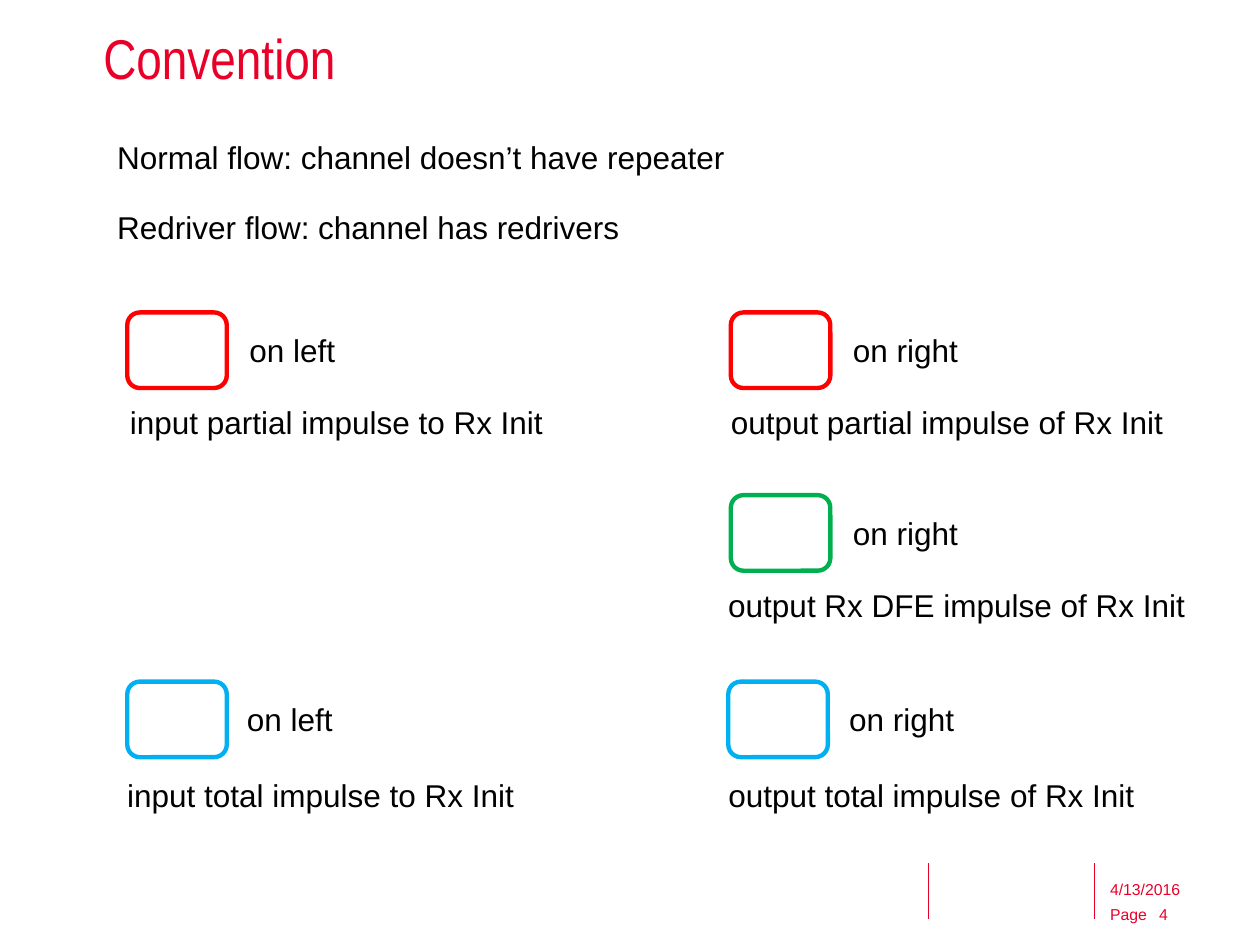
from dataclasses import dataclass
from lxml import etree
from pptx import Presentation
from pptx.dml.color import RGBColor
from pptx.enum.shapes import MSO_CONNECTOR, MSO_SHAPE
from pptx.enum.text import MSO_ANCHOR, MSO_AUTO_SIZE
from pptx.oxml.ns import qn
from pptx.util import Inches, Pt

ROUNDED = MSO_SHAPE.ROUNDED_RECTANGLE
STRAIGHT = MSO_CONNECTOR.STRAIGHT
TOP, BOTTOM = MSO_ANCHOR.TOP, MSO_ANCHOR.BOTTOM
NO_FIT = MSO_AUTO_SIZE.NONE
COLUMNS, ROWS = 100, 75
ACCENT, BLACK = "E90029", "000000"
RED, GREEN, BLUE = "FF0000", "00B050", "00B0F0"


def color(value):
    return RGBColor.from_string(value)


@dataclass
class SlideBuilder:
    presentation: object
    slide: object
    font: str = "Arial"

    def place(self, column, row):
        return (round(self.presentation.slide_width * column / COLUMNS),
                round(self.presentation.slide_height * row / ROWS))

    def text(self, area, lines, size=18, ink=BLACK, font=None, anchor=TOP,
             padding=(0.05, 0.1), spacing=1.0, gap=18, wrap=False):
        left, top, width, height = area
        shape = self.slide.shapes.add_textbox(*self.place(left, top), *self.place(width, height))
        frame = shape.text_frame
        frame.auto_size = NO_FIT
        frame.word_wrap = wrap
        frame.vertical_anchor = anchor
        vertical, right = padding
        frame.margin_left = 0
        frame.margin_right = Inches(right)
        frame.margin_top = frame.margin_bottom = Inches(vertical)
        for index, line in enumerate(lines):
            paragraph = frame.add_paragraph() if index else frame.paragraphs[0]
            paragraph.line_spacing = spacing
            if index:
                paragraph.space_before = Pt(gap)
            run = paragraph.add_run()
            run.text = line
            run.font.name = font or self.font
            run.font.size = Pt(size)
            run.font.color.rgb = color(ink)

    def footer_text(self, area, line, spacing=1.0, wrap=True):
        self.text(area, [line], size=9, ink=ACCENT, anchor=BOTTOM,
                  padding=(0, 0), spacing=spacing, wrap=wrap)

    def divider(self, column, top, bottom):
        line = self.slide.shapes.add_connector(
            STRAIGHT, *self.place(column, top), *self.place(column, bottom))
        line.line.color.rgb = color(ACCENT)
        line.line.width = Pt(0.5)
        etree.SubElement(line._element.spPr, qn("a:effectLst"))

    def box(self, left, top, outline):
        shape = self.slide.shapes.add_shape(
            ROUNDED, *self.place(left, top), *self.place(7.9, 6))
        shape.shadow.inherit = False
        shape.fill.background()
        shape.line.color.rgb = color(outline)
        shape.line.width = Pt(2.5)

    def legend_entry(self, left, top, outline, side, side_area, caption, caption_area):
        self.box(left, top, outline)
        side_left, side_width = side_area
        self.text((side_left, top + 1, side_width, 4), [side])
        caption_left, caption_top, caption_width = caption_area
        self.text((caption_left, caption_top, caption_width, 4), [caption])


def main():
    presentation = Presentation()
    presentation.slide_width = Inches(10)
    presentation.slide_height = Inches(7.5)
    slide = presentation.slides.add_slide(presentation.slide_layouts[6])
    builder = SlideBuilder(presentation, slide)

    for column in (73.7, 86.9):
        builder.divider(column, 68.5, 72.9)
    builder.footer_text((88.1, 71.8, 2.9, 1.5), "Page", spacing=1.1, wrap=False)
    builder.footer_text((92, 71, 3, 2.3), "4", spacing=1.1)
    builder.footer_text((88.1, 67.3, 11.9, 4), "4/13/2016")

    builder.text((8.2, 1.7, 78.7, 5.6), ["Convention"], size=32, ink=ACCENT,
                 font="Arial Narrow", anchor=BOTTOM, padding=(0, 0), spacing=0.9, wrap=True)
    builder.text((9.3, 10.5, 49.7, 9.6), ["Normal flow: channel doesn’t have repeater",
                                          "Redriver flow: channel has redrivers"])

    entries = [
        (10.1, 24.8, RED, "on left", (19.8, 7.9),
         "input partial impulse to Rx Init", (10.3, 31.5, 34.8)),
        (58, 24.8, RED, "on right", (67.7, 9.4),
         "output partial impulse of Rx Init", (58, 31.5, 36.4)),
        (58, 39.3, GREEN, "on right", (67.7, 9.4),
         "output Rx DFE impulse of Rx Init", (57.8, 46, 38.3)),
        (10.1, 54.1, BLUE, "on left", (19.6, 7.9),
         "input total impulse to Rx Init", (10.1, 61.1, 32.7)),
        (57.8, 54.1, BLUE, "on right", (67.4, 9.4),
         "output total impulse of Rx Init", (57.8, 61.1, 34.2)),
    ]
    for entry in entries:
        builder.legend_entry(*entry)

    presentation.save("out.pptx")


if __name__ == "__main__":
    main()
